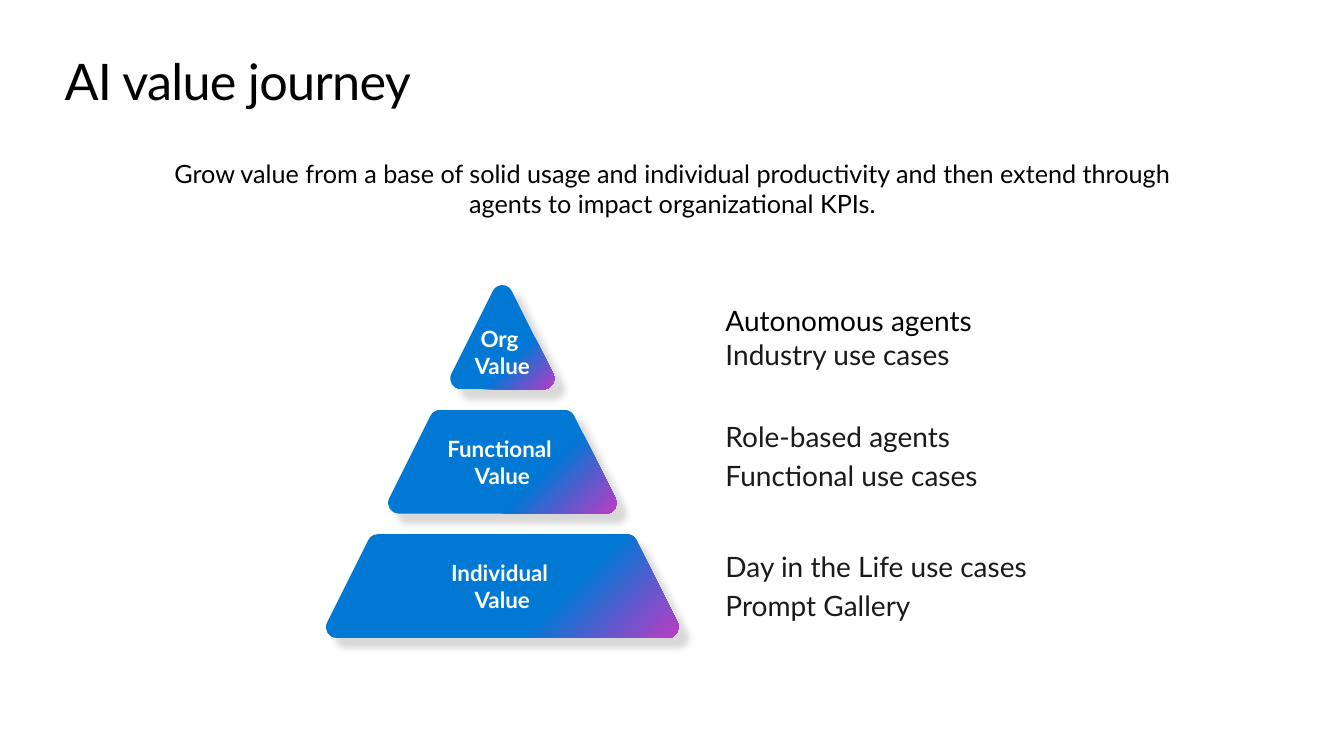
import math
from dataclasses import dataclass

from lxml import etree
from pptx import Presentation
from pptx.dml.color import RGBColor
from pptx.enum import text as t
from pptx.oxml import ns
from pptx.util import Pt

BLACK = RGBColor(0x00, 0x00, 0x00)
INK = RGBColor(0x1A, 0x1A, 0x1A)
WHITE = RGBColor(0xFF, 0xFF, 0xFF)
BLUE = RGBColor(0x00, 0x78, 0xD4)
PURPLE = RGBColor(0xC0, 0x3B, 0xC4)
SHADE = RGBColor(0x45, 0x41, 0x42)

FONT = "Lato"
APEX_X, APEX_Y = 358.8, 194.4  # where the straight sides would meet
SLOPE = 0.5                    # sideways run of a side per point of height
TOP, HIGH, PITCH = 204, 74, 88.8
ROUND = 7.5                    # corner radius
LIST_X, LIST_W = 518.2, 414

Point = tuple[float, float]


@dataclass
class Line:
    text: str
    color: RGBColor = INK


@dataclass
class Tier:
    words: tuple[str, str]
    lines: list[Line]
    list_y: float
    gap: float = 4


TIERS = [
    Tier(("Org ", "Value"),
         [Line("Autonomous agents", BLACK), Line("Industry use cases")], 217, 0),
    Tier(("Functional ", "Value"),
         [Line("Role-based agents"), Line("Functional use cases")], 299.5),
    Tier(("Individual ", "Value"),
         [Line("Day in the Life use cases"), Line("Prompt Gallery")], 392.7),
]


def style(run, size: float, color: RGBColor, bold: bool = False) -> None:
    run.font.name = FONT
    run.font.size = Pt(size)
    run.font.bold = bold
    run.font.color.rgb = color


def frame(shape, anchor, foot: float = 0):
    """Prepare a wrapping text frame without side margins."""
    box = shape.text_frame
    box.word_wrap = True
    box.auto_size = t.MSO_AUTO_SIZE.NONE
    box.vertical_anchor = anchor
    box.margin_left = box.margin_right = box.margin_top = 0
    box.margin_bottom = Pt(foot)
    return box


def fill_box(holder, area: tuple, lines: list[Line], size: float, gap: float = 0,
             align=t.PP_ALIGN.LEFT, anchor=t.MSO_ANCHOR.MIDDLE) -> None:
    """Place a placeholder and write one plain paragraph per line."""
    holder.left, holder.top, holder.width, holder.height = map(Pt, area)
    box = frame(holder, anchor)
    for i, line in enumerate(lines):
        para = box.paragraphs[0] if i == 0 else box.add_paragraph()
        props = para._p.get_or_add_pPr()
        props.set("marL", "0")
        props.set("indent", "0")
        etree.SubElement(props, ns.qn("a:buNone"))
        para.alignment = align
        para.space_before = Pt(0)
        para.space_after = Pt(gap)
        run = para.add_run()
        run.text = line.text
        style(run, size, line.color)


def bend(prev: Point, tip: Point, following: Point) -> list[Point]:
    """Start, two handles and end of the curve that rounds one corner."""
    a = math.atan2(prev[1] - tip[1], prev[0] - tip[0])
    b = math.atan2(following[1] - tip[1], following[0] - tip[0])
    half = abs(math.remainder(b - a, math.tau)) / 2
    cut = ROUND / math.tan(half)
    near = cut - ROUND * 4 / 3 * math.tan((math.pi - 2 * half) / 4)
    return [(tip[0] + far * math.cos(m), tip[1] + far * math.sin(m))
            for m, far in ((a, cut), (a, near), (b, near), (b, cut))]


def outline(row: int) -> list[Point]:
    """Rounded outline of a tier cut from the large triangle."""
    top = TOP + row * PITCH
    base = top + HIGH
    wide = SLOPE * (base - APEX_Y)
    tips = [(APEX_X + wide, base), (APEX_X - wide, base)]
    if row == 0:
        tips.append((APEX_X, APEX_Y))
    else:
        slim = SLOPE * (top - APEX_Y)
        tips += [(APEX_X - slim, top), (APEX_X + slim, top)]
    dots = []
    for i, tip in enumerate(tips):
        dots += bend(tips[i - 1], tip, tips[(i + 1) % len(tips)])
    return [(Pt(x), Pt(y)) for x, y in dots]


def curve(shape) -> None:
    """Join the three legs of every corner into one curve."""
    legs = list(shape.element.spPr.iter(ns.qn("a:lnTo")))
    for i in range(0, len(legs), 4):
        first, *rest = legs[i:i + 3]
        first.tag = ns.qn("a:cubicBezTo")
        for leg in rest:
            first.append(leg[0])
            leg.getparent().remove(leg)


def paint(shape) -> None:
    """Add the corner glow and the soft shadow."""
    shape.line.fill.background()
    shape.shadow.inherit = False
    props = shape.element.spPr
    space = ns.nsdecls("a")
    glow = etree.fromstring(
        f'<a:gradFill {space} rotWithShape="1"><a:gsLst>'
        f'<a:gs pos="0"><a:srgbClr val="{PURPLE}"/></a:gs>'
        f'<a:gs pos="35000"><a:srgbClr val="{BLUE}"/></a:gs></a:gsLst>'
        '<a:path path="circle"><a:fillToRect l="100000" t="100000"/></a:path>'
        '</a:gradFill>')
    props.find(ns.qn("a:ln")).addprevious(glow)
    shade = etree.fromstring(
        f'<a:outerShdw {space} blurRad="{Pt(5)}" dist="{Pt(10)}" dir="2700000" '
        f'algn="tl" rotWithShape="0"><a:srgbClr val="{SHADE}">'
        '<a:alpha val="20000"/></a:srgbClr></a:outerShdw>')
    props.find(ns.qn("a:effectLst")).append(shade)


def draw_tier(slide, tier: Tier, row: int) -> None:
    dots = outline(row)
    pen = slide.shapes.build_freeform(*dots[0])
    pen.add_line_segments(dots[1:], close=True)
    shape = pen.convert_to_shape()
    curve(shape)
    paint(shape)
    if row == 0:
        box = frame(shape, t.MSO_ANCHOR.BOTTOM, 7.2)
    else:
        box = frame(shape, t.MSO_ANCHOR.MIDDLE)
    para = box.paragraphs[0]
    para.alignment = t.PP_ALIGN.CENTER
    for i, word in enumerate(tier.words):
        if i:
            para.add_line_break()
        run = para.add_run()
        run.text = word
        style(run, 16, WHITE, True)


def main() -> None:
    deck = Presentation()
    deck.slide_width, deck.slide_height = Pt(960), Pt(540)
    slide = deck.slides.add_slide(deck.slide_layouts.get_by_name("Comparison"))
    title, intro, *lists = slide.placeholders

    # Title and introduction
    fill_box(title, (46.1, 36, 867.6, 44), [Line("AI value journey", BLACK)], 36,
             anchor=t.MSO_ANCHOR.TOP)
    title.text_frame.paragraphs[0].runs[0].font._element.set("spc", "-50")
    fill_box(intro, (99.4, 113, 761.8, 44), [Line(
        "Grow value from a base of solid usage and individual productivity and then "
        "extend through agents to impact organizational KPIs.", BLACK)], 18,
        align=t.PP_ALIGN.CENTER, anchor=t.MSO_ANCHOR.TOP)

    # Pyramid with its lists
    for row, (tier, holder) in enumerate(zip(TIERS, lists)):
        draw_tier(slide, tier, row)
        fill_box(holder, (LIST_X, tier.list_y, LIST_W, 48 + tier.gap),
                 tier.lines, 20, tier.gap)

    deck.save("out.pptx")


if __name__ == "__main__":
    main()
